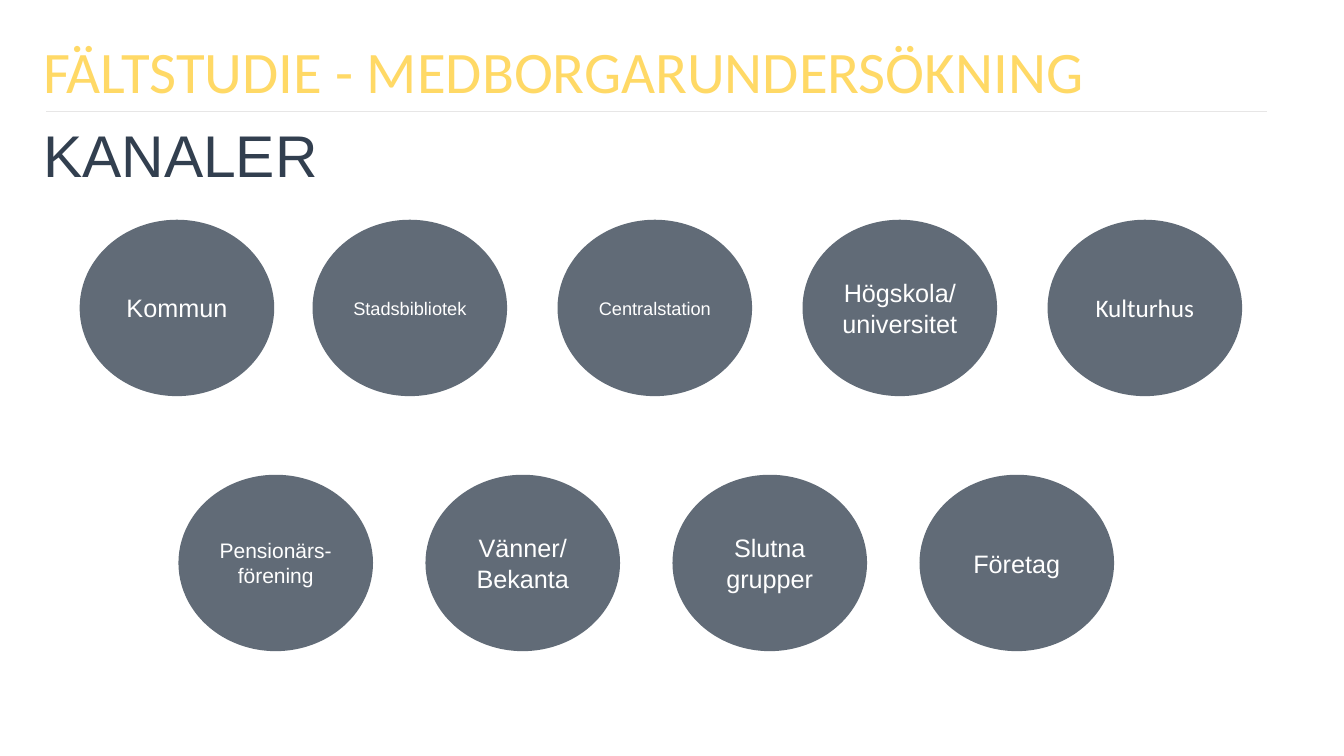
from lxml import etree
from pptx import Presentation, util as u
from pptx.dml.color import RGBColor
from pptx.enum import shapes, text
from pptx.oxml import ns

PX = 9144
COLORS = {"yellow": "FFD966", "slate": "323F4F", "rule": "E7E6E6", "white": "FFFFFF"}


class SlideBuilder:
    def __init__(self, slide):
        self.slide = slide

    def px(self, *lengths):
        return [u.Emu(length * PX) for length in lengths]

    def color(self, name):
        return RGBColor.from_string(COLORS[name])

    def add_lines(self, frame, lines, size, font, color, align):
        frame.word_wrap = True
        for index, line in enumerate(lines):
            paragraph = frame.add_paragraph() if index else frame.paragraphs[0]
            paragraph.alignment = align
            run = paragraph.add_run()
            run.text = line
            run.font.size = u.Pt(size)
            run.font.name = font
            run.font.color.rgb = self.color(color)

    def heading(self, box, wording, font, color):
        heading = self.slide.shapes.add_textbox(*self.px(*box))
        self.add_lines(heading.text_frame, [wording], 42, font, color, text.PP_ALIGN.LEFT)

    def rule(self, left, right, y):
        rule = self.slide.shapes.add_connector(
            shapes.MSO_CONNECTOR.STRAIGHT, *self.px(left, y, right, y))
        rule.line.color.rgb = self.color("rule")
        rule.line.width = u.Pt(0.75)
        etree.SubElement(rule._element.spPr, ns.qn("a:effectLst"))

    def channel(self, left, top, lines, size, font):
        channel = self.slide.shapes.add_shape(
            shapes.MSO_SHAPE.OVAL, *self.px(left, top, 193, 175))
        channel.shadow.inherit = False
        channel.fill.solid()
        channel.fill.fore_color.rgb = self.color("slate")
        tint = channel._element.spPr.find(".//" + ns.qn("a:srgbClr"))
        etree.SubElement(tint, ns.qn("a:alpha"), val="77000")
        channel.line.fill.background()
        channel.text_frame.vertical_anchor = text.MSO_ANCHOR.MIDDLE
        self.add_lines(channel.text_frame, lines, size, font, "white", text.PP_ALIGN.CENTER)


def main():
    deck = Presentation()
    deck.slide_width = u.Emu(1333 * PX)
    deck.slide_height = u.Emu(750 * PX)
    page = SlideBuilder(deck.slides.add_slide(deck.slide_layouts[6]))

    page.heading((33, 29, 1074, 81), "FÄLTSTUDIE - MEDBORGARUNDERSÖKNING", "Calibri", "yellow")
    page.rule(46, 1257, 111)

    page.channel(79, 218, ["Kommun"], 18, "Arial")
    rows = [
        (310, 243, 218, [
            (["Stadsbibliotek"], 13, "Arial"),
            (["Centralstation"], 13, "Arial"),
            (["Högskola/", "universitet"], 18, "Arial"),
            (["Kulturhus"], 18, "Calibri"),
        ]),
        (177, 245, 471, [
            (["Pensionärs-", "förening"], 15, "Arial"),
            (["Vänner/", "Bekanta"], 18, "Arial"),
            (["Slutna", "grupper"], 18, "Arial"),
            (["Företag"], 18, "Arial"),
        ]),
    ]
    for left, pitch, top, channels in rows:
        for column, (lines, size, font) in enumerate(channels):
            page.channel(left + column * pitch, top, lines, size, font)

    page.heading((33, 113, 329, 81), "KANALER", "Arial", "slate")
    deck.save("out.pptx")


if __name__ == "__main__":
    main()
